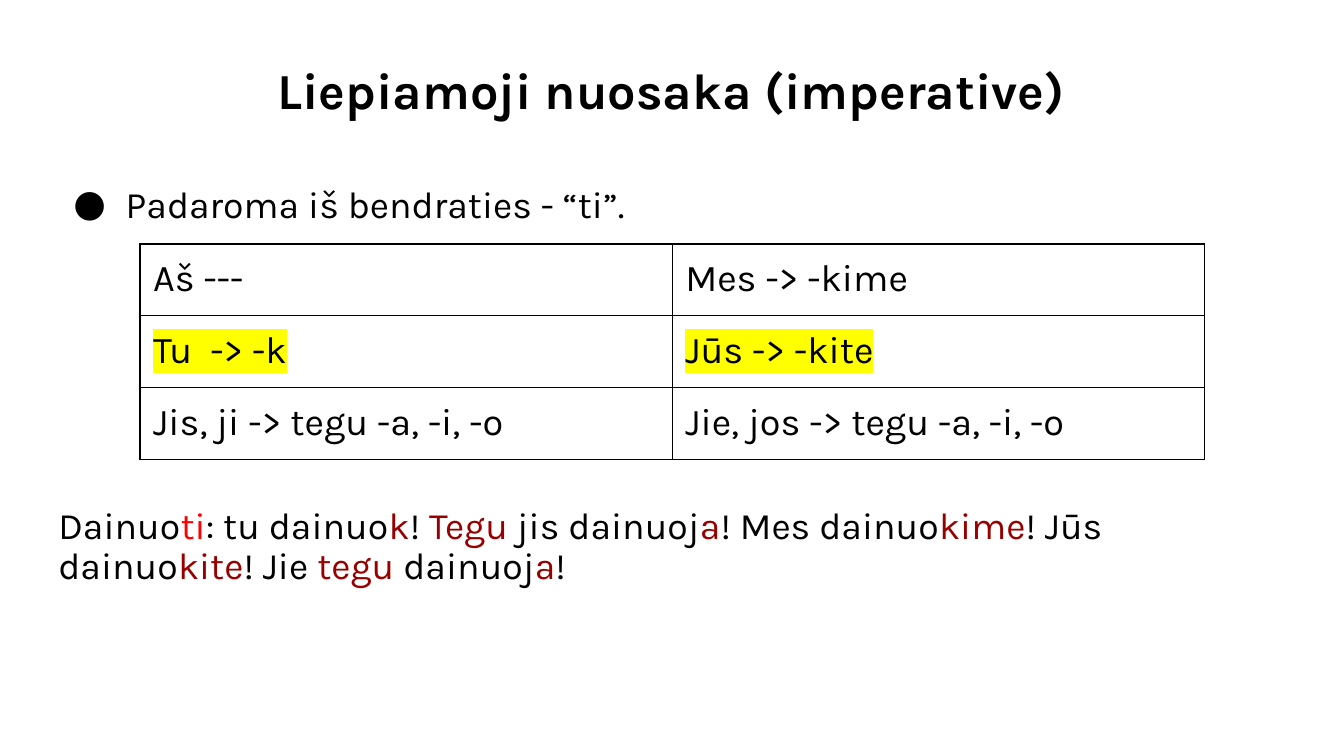
import dataclasses
import typing

import lxml.etree
import pptx
import pptx.dml.color
import pptx.enum.text
import pptx.oxml.ns
import pptx.util

Cm, Pt = pptx.util.Cm, pptx.util.Pt
RGB = pptx.dml.color.RGBColor
qn = pptx.oxml.ns.qn


@dataclasses.dataclass(frozen=True)
class Theme:
    font: str = "Karla"
    ink: str = "000000"
    paper: str = "FFFFFF"
    red: str = "FF0000"
    ending: str = "980000"
    marker: str = "FFFF00"
    title_size: float = 36
    body_size: float = 26.7
    table_size: float = 27
    border: float = 1
    line_spacing: float = 0.9
    inset: float = 0.33


@dataclasses.dataclass(frozen=True)
class Box:
    left: float
    top: float
    width: float
    height: float

    def lengths(self) -> list[int]:
        return [Cm(v) for v in (self.left, self.top, self.width, self.height)]


@dataclasses.dataclass(frozen=True)
class Piece:
    text: str
    color: str


@dataclasses.dataclass(frozen=True)
class PronounRow:
    singular: str
    plural: str
    highlight: str | None = None


THEME = Theme()
TITLE_BOX = Box(1.14, 1.32, 31.55, 2.13)
RULE_BOX = Box(1.14, 4.37, 31.55, 1.6)
TABLE_BOX = Box(3.53, 6.15, 26.82, 5.43)
EXAMPLE_BOX = Box(1.14, 12.44, 31.55, 2.7)

PRONOUN_ROWS = [
    PronounRow("Aš ---", "Mes -> -kime"),
    PronounRow("Tu  -> -k", "Jūs -> -kite", THEME.marker),
    PronounRow("Jis, ji -> tegu -a, -i, -o", "Jie, jos -> tegu -a, -i, -o"),
]

# Plain stretches alternate with the coloured endings and particles.
EXAMPLE_TEXT = "Dainuo|ti|: tu dainuo|k|! |Tegu| jis dainuoj|a|! Mes dainuo|kime|! Jūs dainuo|kite|! Jie |tegu| dainuoj|a|!"
EXAMPLE = [
    Piece(text, THEME.ink if i % 2 == 0 else THEME.red if text == "ti" else THEME.ending)
    for i, text in enumerate(EXAMPLE_TEXT.split("|"))
]


def add_text(p: typing.Any, text: str, *, size: float, color: str = THEME.ink,
             bold: bool = False, highlight: str | None = None) -> None:
    r = p.add_run()
    r.text = text
    r.font.size = Pt(size)
    r.font.bold = bold
    r.font.name = THEME.font
    r.font.color.rgb = RGB.from_string(color)
    if highlight:
        mark = lxml.etree.Element(qn("a:highlight"))
        lxml.etree.SubElement(mark, qn("a:srgbClr"), val=highlight)
        r.font._element.find(qn("a:latin")).addprevious(mark)


def set_frame(tf: typing.Any) -> typing.Any:
    """Apply insets and line spacing, and return the first paragraph."""
    tf.word_wrap = True
    tf.auto_size = pptx.enum.text.MSO_AUTO_SIZE.NONE
    tf.vertical_anchor = pptx.enum.text.MSO_ANCHOR.TOP
    tf.margin_left = tf.margin_right = tf.margin_top = tf.margin_bottom = Cm(THEME.inset)
    p = tf.paragraphs[0]
    p.line_spacing = THEME.line_spacing
    return p


def add_box(s: typing.Any, box: Box) -> typing.Any:
    return set_frame(s.shapes.add_textbox(*box.lengths()).text_frame)


def set_bullet(p: typing.Any) -> None:
    ppr = p._p.get_or_add_pPr()
    ppr.set("marL", str(Cm(1.7)))
    ppr.set("indent", str(-Cm(1.32)))
    color = lxml.etree.SubElement(ppr, qn("a:buClr"))
    lxml.etree.SubElement(color, qn("a:srgbClr"), val=THEME.ink)
    lxml.etree.SubElement(ppr, qn("a:buFont"), typeface=THEME.font)
    lxml.etree.SubElement(ppr, qn("a:buChar"), char="●")


def set_borders(cell: typing.Any) -> None:
    tcpr = cell._tc.get_or_add_tcPr()
    for i, side in enumerate(("a:lnL", "a:lnR", "a:lnT", "a:lnB")):
        line = lxml.etree.Element(qn(side), w=str(Pt(THEME.border)))
        fill = lxml.etree.SubElement(line, qn("a:solidFill"))
        lxml.etree.SubElement(fill, qn("a:srgbClr"), val=THEME.ink)
        tcpr.insert(i, line)


def add_title(s: typing.Any, text: str) -> None:
    sp = s.shapes.title
    sp.left, sp.top, sp.width, sp.height = TITLE_BOX.lengths()
    p = set_frame(sp.text_frame)
    p.alignment = pptx.enum.text.PP_ALIGN.CENTER
    add_text(p, text, size=THEME.title_size, bold=True)


def add_pronoun_table(s: typing.Any, rows: list[PronounRow]) -> None:
    table = s.shapes.add_table(len(rows), 2, *TABLE_BOX.lengths()).table
    table.first_row = table.horz_banding = False
    for i, row in enumerate(rows):
        for j, text in enumerate((row.singular, row.plural)):
            cell = table.cell(i, j)
            cell.fill.background()
            cell.margin_left = cell.margin_right = Cm(THEME.inset)
            cell.margin_top = cell.margin_bottom = Cm(THEME.inset)
            add_text(cell.text_frame.paragraphs[0], text, size=THEME.table_size,
                     highlight=row.highlight)
            set_borders(cell)


def main() -> None:
    prs = pptx.Presentation()
    prs.slide_width, prs.slide_height = Cm(33.87), Cm(19.05)
    s = prs.slides.add_slide(prs.slide_layouts.get_by_name("Title Only"))
    s.background.fill.solid()
    s.background.fill.fore_color.rgb = RGB.from_string(THEME.paper)

    add_title(s, "Liepiamoji nuosaka (imperative)")
    p = add_box(s, RULE_BOX)
    set_bullet(p)
    add_text(p, "Padaroma iš bendraties - “ti”.", size=THEME.body_size)
    add_pronoun_table(s, PRONOUN_ROWS)
    p = add_box(s, EXAMPLE_BOX)
    for piece in EXAMPLE:
        add_text(p, piece.text, size=THEME.body_size, color=piece.color)

    prs.save("out.pptx")


if __name__ == "__main__":
    main()
